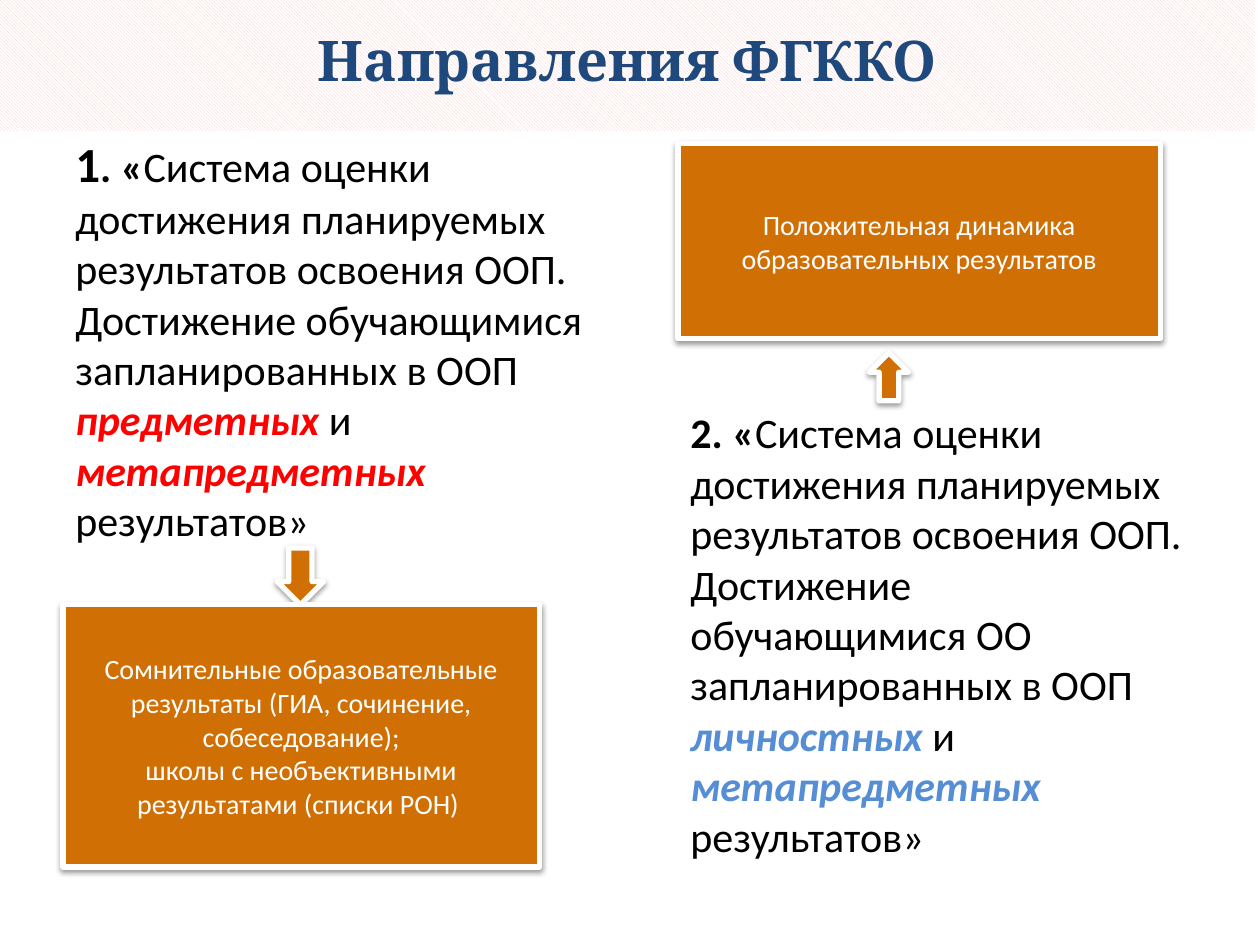
import pptx
import pptx.dml.color
import pptx.enum.dml
import pptx.enum.shapes
import pptx.enum.text
import pptx.oxml.ns
import pptx.util
import lxml.etree

Pt = pptx.util.Pt
SHAPE = pptx.enum.shapes.MSO_SHAPE
ALIGN = pptx.enum.text.PP_ALIGN
ANCHOR = pptx.enum.text.MSO_ANCHOR
qn = pptx.oxml.ns.qn


def colour(value):
    return pptx.dml.color.RGBColor.from_string(value)


def apply(target, values):
    for name, value in values.items():
        setattr(target, name, value)


class SlideStyle:
    accent = "D07004"
    white = "FFFFFF"
    black = "000000"
    navy = "1F497D"
    band = "FCC9C8"
    body_font = {"name": "Calibri", "size": Pt(24)}
    box_font = {"name": "Calibri", "size": Pt(16)}
    title_font = {"name": "Cambria", "size": Pt(32), "bold": True}
    body_frame = {"word_wrap": True, "vertical_anchor": ANCHOR.TOP}
    box_frame = {"word_wrap": True, "vertical_anchor": ANCHOR.MIDDLE}
    box_frame.update({f"margin_{side}": Pt(3) for side in ("left", "top", "right", "bottom")})
    title_frame = {"word_wrap": False, "vertical_anchor": ANCHOR.MIDDLE}

    def __init__(self, slide):
        self.slide = slide

    def run(self, paragraph, text, font, tint):
        run = paragraph.add_run()
        run.text = text
        apply(run.font, font)
        run.font.color.rgb = colour(tint)

    def shadow(self, shape):
        shape.shadow.inherit = False
        effects = shape._element.spPr.find(qn("a:effectLst"))
        outer = lxml.etree.SubElement(effects, qn("a:outerShdw"), blurRad=str(Pt(3.1)),
                                      dist=str(Pt(1.6)), dir="5400000", rotWithShape="0")
        tint = lxml.etree.SubElement(outer, qn("a:srgbClr"), val=self.black)
        lxml.etree.SubElement(tint, qn("a:alpha"), val="38000")

    def block(self, kind, left, top, width, height):
        block = self.slide.shapes.add_shape(kind, Pt(left), Pt(top), Pt(width), Pt(height))
        block.fill.solid()
        block.fill.fore_color.rgb = colour(self.accent)
        block.line.color.rgb = colour(self.white)
        block.line.width = Pt(3)
        self.shadow(block)
        return block

    def result(self, left, top, width, height, lines):
        frame = self.block(SHAPE.RECTANGLE, left, top, width, height).text_frame
        apply(frame, self.box_frame)
        for index, line in enumerate(lines):
            paragraph = frame.add_paragraph() if index else frame.paragraphs[0]
            paragraph.alignment = ALIGN.CENTER
            self.run(paragraph, line, self.box_font, self.white)

    def direction(self, left, top, width, height, number, number_size, goal, subject, tint):
        area = self.slide.shapes.add_textbox(Pt(left), Pt(top), Pt(width), Pt(height))
        apply(area.text_frame, self.body_frame)
        paragraph = area.text_frame.paragraphs[0]
        paragraph.space_before = Pt(5)
        bold = {**self.body_font, "bold": True}
        accent = {**bold, "italic": True}
        plain = {**self.body_font, "bold": False}
        for text, font, ink in (
            (number, {**bold, "size": Pt(number_size)}, self.black),
            (". «", bold, self.black),
            (goal, plain, self.black),
            (subject + " ", accent, tint),
            ("и ", plain, self.black),
            ("метапредметных", accent, tint),
            (" результатов»", plain, self.black),
        ):
            self.run(paragraph, text, font, ink)

    def title(self, width, height, text):
        banner = self.slide.shapes.add_shape(SHAPE.RECTANGLE, 0, 0, Pt(width), Pt(height))
        banner.shadow.inherit = False
        banner.fill.patterned()
        banner.fill.pattern = pptx.enum.dml.MSO_PATTERN.LIGHT_DOWNWARD_DIAGONAL
        banner.fill.fore_color.rgb = colour(self.band)
        banner.fill.back_color.rgb = colour(self.white)
        banner.line.fill.background()
        apply(banner.text_frame, self.title_frame)
        paragraph = banner.text_frame.paragraphs[0]
        apply(paragraph, {"alignment": ALIGN.CENTER, "line_spacing": 0.8})
        self.run(paragraph, text, self.title_font, self.navy)


def main():
    deck = pptx.Presentation()
    deck.slide_width, deck.slide_height = Pt(720), Pt(540)
    style = SlideStyle(deck.slides.add_slide(deck.slide_layouts[6]))
    left_column, right_column = 36, 387.4
    goal = ("Система оценки достижения планируемых результатов освоения ООП. "
            "Достижение обучающимися {}запланированных в ООП ")

    style.direction(left_column, 72.7, 305.3, 241.2, "1", 28, goal.format(""),
                    "предметных", "FF0000")
    style.direction(right_column, 229, 296.6, 265.7, "2", 24, goal.format("ОО "),
                    "личностных", "558ED5")
    style.block(SHAPE.DOWN_ARROW, 158.4, 313.2, 26.6, 32.4)
    style.result(left_column, 345.6, 272.2, 149.8, [
        "Сомнительные образовательные результаты (ГИА, сочинение, собеседование);",
        "школы с необъективными результатами (списки РОН) ",
    ])
    style.block(SHAPE.UP_ARROW, 496.8, 201.6, 22.3, 27.4)
    style.result(right_column, 82, 275.8, 111.6,
                 ["Положительная динамика образовательных результатов"])
    style.title(717, 75, "Направления ФГККО")
    deck.save("out.pptx")


if __name__ == "__main__":
    main()
